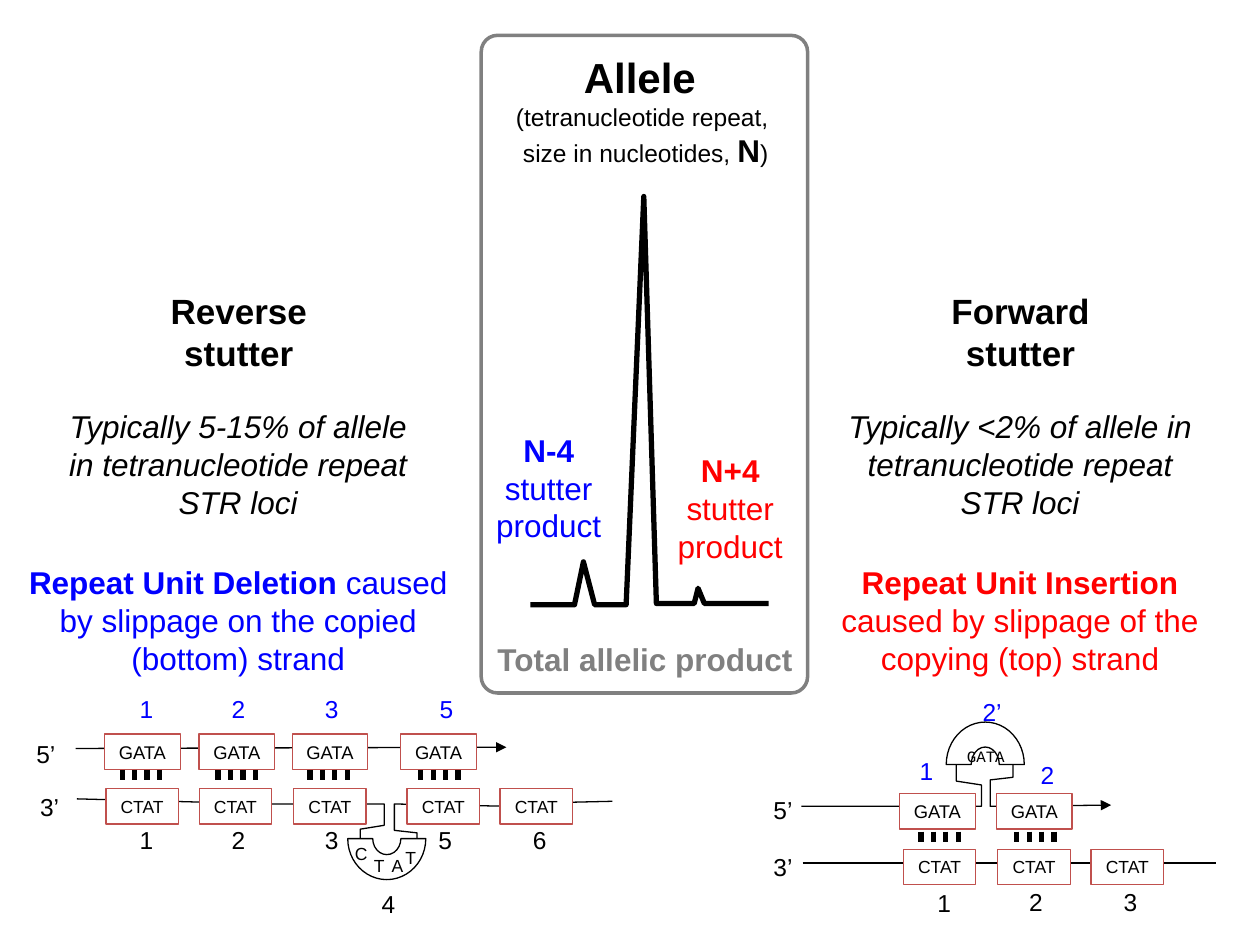
from lxml import etree
from pptx import Presentation
from pptx import util as u
from pptx.dml.color import RGBColor
from pptx.enum import shapes, text
from pptx.oxml import ns

Pt = u.Pt
BLACK = RGBColor(0, 0, 0)
WHITE = RGBColor(255, 255, 255)
BLUE = RGBColor(0, 0, 255)
RED = RGBColor(255, 0, 0)
GRAY = RGBColor(128, 128, 128)
BRICK = RGBColor(0xC0, 0x50, 0x4D)
CENTER, LEFT = text.PP_ALIGN.CENTER, text.PP_ALIGN.LEFT

slippage_notes = [
    ((458, 318.2, 249.8, 72.7), RED,
     [("Repeat Unit Insertion ", True), ("caused by slippage of the copying (top) strand", False)]),
    ((2.2, 318.2, 267.8, 72.7), BLUE,
     [("Repeat Unit Deletion ", True), ("caused by slippage on the copied (bottom) strand", False)]),
]
frequencies = [
    ((27.4, 229, 217.4, 72), "Typically 5-15% of allele in tetranucleotide repeat STR loci"),
    ((473.8, 229, 218.2, 72), "Typically <2% of allele in tetranucleotide repeat STR loci"),
]
stutter_names = [
    ((75.6, 162, 121.7, 55.4), "Reverse stutter"),
    ((536.4, 162, 93.6, 55.4), "Forward stutter"),
]

peak_trace = [
    (303.1, 345.6), (328.3, 345.6), (333.4, 321.1), (339.8, 345.6), (357.8, 345.6), (367.9, 112.3),
    (375.1, 344.9), (396.7, 344.9), (398.9, 336.2), (402.5, 344.9), (439.2, 344.9),
]
forward_loop = [
    (458, 460.8), (560.9, 460.8), (560.9, 448.6), (546.5, 446.4), (546.5, 436.3), (552.2, 423.4),
    (560.9, 421.9), (568.1, 420.5), (573.8, 423.4), (577.4, 429.8), (578.9, 434.9), (578.9, 444.2),
    (565.9, 445.7), (565.9, 460.8), (635, 460.1),
]
reverse_loop = [
    (118.1, 459.4), (219.6, 459.4), (219.6, 471.6), (205.9, 473.8), (205.9, 483.8), (211.7, 496.1),
    (219.6, 498.2), (226.8, 499), (232.6, 496.1), (236.2, 490.3), (238.3, 484.6), (238.3, 475.9),
    (225.4, 474.5), (225.4, 459.4), (293.8, 460.8),
]
strands = [
    ((458.6, 493.2), (694.8, 493.2), False),
    ((349.9, 457.9), (319, 458.6), False),
    ((123.8, 458.6), (43.9, 456.5), False),
    ((43.2, 427.7), (289.4, 427), True),
]
repeat_units = [
    ("GATA", 10.5, 43.2, 419.4, [59.8, 113.8, 167, 229]),
    ("CTAT", 10, 41.4, 450.7, [60.5, 113.8, 167.8, 232.6, 285.8]),
    ("GATA", 10.5, 43.2, 453.6, [514.1, 569.5]),
    ("CTAT", 10, 41.4, 485.3, [516.2, 570.2, 623.5]),
]
UNIT_HEIGHT = 20.2
base_pairs = [
    (439.9, [69.8, 124.6, 177.1, 240.5]),
    (475.2, [526.3, 581]),
]
PAIRS_PER_UNIT, PAIR_PITCH, PAIR_LENGTH = 4, 7.1, 5.8
slipped_arcs = [
    ((540.7, 412.6, 44.6, 48.6), 0),
    ((198.7, 455.8, 44.6, 46.8), 180),
]
small_labels = [
    (BLUE, 14, 22.3, [("1", 72.7, 393.1), ("2", 125.3, 393.1), ("3", 178.6, 393.1),
                      ("5", 244.1, 393.1), ("1", 518.4, 428.4), ("2", 587.5, 430.6)]),
    (BLUE, 14, 25.9, [("2’", 554.4, 394.6)]),
    (BLACK, 14, 22.3, [("1", 72.7, 468), ("2", 125.3, 468), ("3", 178.6, 468), ("5", 243.4, 468),
                       ("6", 297.4, 468), ("4", 211, 504.7), ("1", 528.5, 504),
                       ("2", 581, 503.3), ("3", 635, 503.3)]),
    (BLACK, 14, 25.2, [("5’", 13.7, 419), ("3’", 15.8, 449.3), ("5’", 434.9, 450.7), ("3’", 434.9, 483.1)]),
    (BLACK, 10, 21.2, [("C", 195.8, 478.1), ("T", 206.6, 485.3), ("A", 216.7, 485.3), ("T", 224.6, 480.2)]),
]

deck = Presentation()
deck.slide_width, deck.slide_height = Pt(720), Pt(540)
slide = deck.slides.add_slide(deck.slide_layouts[6])
canvas = slide.shapes


def style_paragraph(paragraph, size, color, bold=None, italic=None, align=CENTER, face="Arial"):
    paragraph.alignment = align
    font = paragraph.font
    font.name, font.size, font.bold, font.italic = face, Pt(size), bold, italic
    font.color.rgb = color


def add_words(box, paragraphs, size, color, wrap=True, **style):
    frame = canvas.add_textbox(*map(Pt, box)).text_frame
    frame.word_wrap = wrap
    frame.auto_size = text.MSO_AUTO_SIZE.SHAPE_TO_FIT_TEXT
    for index, runs in enumerate(paragraphs):
        paragraph = frame.add_paragraph() if index else frame.paragraphs[0]
        style_paragraph(paragraph, size, color, **style)
        for words, *emphasis in runs:
            run = paragraph.add_run()
            run.text = words
            if emphasis:
                run.font.bold = emphasis[0]
            if len(emphasis) > 1:
                run.font.size = Pt(emphasis[1])


def set_line(outline, color, width, arrow=False):
    outline.line.color.rgb = color
    outline.line.width = Pt(width)
    if arrow:
        etree.SubElement(outline.line._get_or_add_ln(), ns.qn("a:tailEnd"), type="triangle")


def add_line(start, end, width, arrow=False):
    line = canvas.add_connector(shapes.MSO_CONNECTOR.STRAIGHT, *map(Pt, start + end))
    set_line(line, BLACK, width, arrow)
    etree.SubElement(line._element.spPr, ns.qn("a:effectLst"))


def add_trace(points, width, arrow=False):
    (x, y), *rest = [(Pt(px), Pt(py)) for px, py in points]
    builder = canvas.build_freeform(x, y)
    builder.add_line_segments(rest, close=False)
    trace = builder.convert_to_shape()
    trace.shadow.inherit = False
    trace.fill.background()
    set_line(trace, BLACK, width, arrow)


def add_block(kind, box, color, width, fill=WHITE):
    block = canvas.add_shape(kind, *map(Pt, box))
    block.shadow.inherit = False
    if fill is None:
        block.fill.background()
    else:
        block.fill.solid()
        block.fill.fore_color.rgb = fill
    set_line(block, color, width)
    return block


for loop in (forward_loop, reverse_loop):
    add_trace(loop, 0.75, arrow=True)
for start, end, arrow in strands:
    add_line(start, end, 0.75, arrow)

for word, size, width, top, lefts in repeat_units:
    for left in lefts:
        unit = add_block(shapes.MSO_SHAPE.RECTANGLE, (left, top, width, UNIT_HEIGHT), BRICK, 0.75)
        frame = unit.text_frame
        frame.word_wrap = False
        frame.vertical_anchor = text.MSO_ANCHOR.MIDDLE
        frame.text = word
        style_paragraph(frame.paragraphs[0], size, BLACK)

for top, starts in base_pairs:
    for start in starts:
        for step in range(PAIRS_PER_UNIT):
            x = start + step * PAIR_PITCH
            add_line((x, top), (x, top + PAIR_LENGTH), 3)

for box, turn in slipped_arcs:
    arc = add_block(shapes.MSO_SHAPE.BLOCK_ARC, box, BLACK, 0.75)
    arc.adjustments[2] = 0.32
    arc.rotation = turn
add_words((541, 423.4, 44.6, 21.6), [[("GATA",)]], 9, BLACK, wrap=False, face="Courier New")

for color, size, width, labels in small_labels:
    for label, left, top in labels:
        add_words((left, top, width, size + 9.8), [[(label,)]], size, color, wrap=False, align=LEFT)

for box, color, runs in slippage_notes:
    add_words(box, [runs], 18, color)
for box, words in frequencies:
    add_words(box, [[(words,)]], 18, BLACK, italic=True)
for box, words in stutter_names:
    add_words(box, [[(words,)]], 20, BLACK, bold=True)

add_trace(peak_trace, 3)
add_words((287.3, 25.9, 163.4, 74.9),
          [[("Allele ", True, 24)],
           [("(tetranucleotide repeat, ",)],
           [("size in nucleotides, ",), ("N", True, 18), (")",)]], 14, BLACK, wrap=False)
add_words((265.7, 242.6, 95.8, 72.7), [[("N-4", True)], [("stutter product",)]], 18, BLUE)
add_words((373, 254.2, 88.6, 72), [[("N+4 ", True), ("stutter product",)]], 18, RED)
add_words((277.2, 362.2, 185, 28.8), [[("Total allelic product",)]], 18, GRAY,
          wrap=False, bold=True, align=LEFT)
allele_frame = add_block(shapes.MSO_SHAPE.ROUNDED_RECTANGLE, (275, 20.2, 186.5, 375.8), GRAY, 2, fill=None)
allele_frame.adjustments[0] = 0.05

deck.save("out.pptx")
